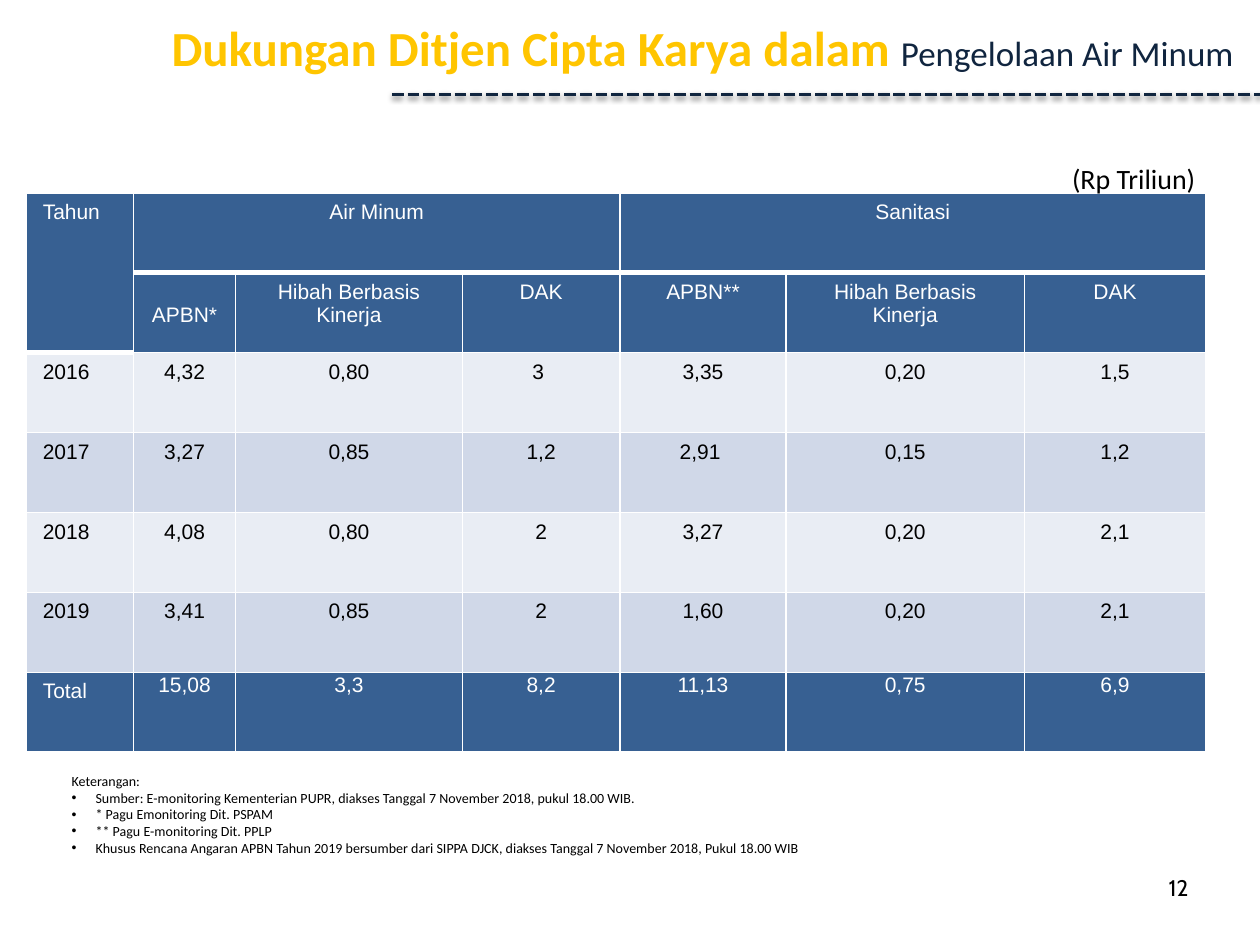
from dataclasses import dataclass
from typing import Any, Optional

from lxml.etree import SubElement
from pptx import Presentation
from pptx.dml.color import RGBColor
from pptx.enum.dml import MSO_LINE
from pptx.enum.shapes import MSO_CONNECTOR
from pptx.enum.text import MSO_ANCHOR, MSO_AUTO_SIZE, PP_ALIGN
from pptx.oxml.ns import qn
from pptx.util import Inches, Pt

NAVY, GOLD, BLACK, WHITE = "10253F", "FFC500", "000000", "FFFFFF"
HEADER_BLUE, PALE, MEDIUM = "376092", "E9EDF4", "D0D8E8"


@dataclass(frozen=True)
class Run:
    text: str
    size: float
    color: str = BLACK
    font: str = "Calibri"
    bold: bool = False


@dataclass(frozen=True)
class Line:
    runs: tuple[Run, ...]
    align: Optional[PP_ALIGN] = None
    bullet: bool = False


@dataclass(frozen=True)
class TextBlock:
    box: tuple[float, float, float, float]
    lines: tuple[Line, ...]
    frame_format: dict[str, Any]


@dataclass(frozen=True)
class BudgetRow:
    values: tuple[Optional[str], ...]
    fill: str
    color: str = BLACK
    bottom_border: float = 1
    value_insets: tuple[float, ...] = (0.13, 0.06, 0.13, 0.06)


GROW = MSO_AUTO_SIZE.SHAPE_TO_FIT_TEXT
LABEL_INSETS = (0.13, 0.06, 0.13, 0.06)
MARGINS = ("margin_left", "margin_top", "margin_right", "margin_bottom")
COLUMN_WIDTHS = (0.85, 0.81, 1.8, 1.25, 1.32, 1.89, 1.44)
MERGES = (((0, 0), (1, 0)), ((0, 1), (0, 3)), ((0, 4), (0, 6)))
GROUP_COLUMNS = ("Hibah Berbasis Kinerja", "DAK")

BUDGET = (
    BudgetRow(("Tahun", "Air Minum", None, None, "Sanitasi", None, None), HEADER_BLUE, WHITE, 3),
    BudgetRow((None, " APBN*", *GROUP_COLUMNS, "APBN**", *GROUP_COLUMNS), HEADER_BLUE, WHITE),
    BudgetRow(("2016", "4,32", "0,80", "3 ", "3,35", "0,20", "1,5"), PALE),
    BudgetRow(("2017", "3,27", "0,85", "1,2", "2,91 ", "0,15", "1,2"), MEDIUM),
    BudgetRow(("2018", "4,08", "0,80", "2", "3,27", "0,20", "2,1"), PALE),
    BudgetRow(("2019", "3,41", "0,85", "2", "1,60", "0,20", "2,1"), MEDIUM),
    BudgetRow(("Total", "15,08", "3,3", "8,2", "11,13", "0,75", "6,9"), HEADER_BLUE, WHITE,
              value_insets=(0.01, 0.01, 0.01, 0)),
)

NOTES = (
    "Sumber: E-monitoring Kementerian PUPR, diakses Tanggal 7 November 2018, pukul 18.00 WIB.",
    "* Pagu Emonitoring Dit. PSPAM",
    "** Pagu E-monitoring Dit. PPLP",
    "Khusus Rencana Angaran APBN Tahun 2019 bersumber dari SIPPA DJCK, "
    "diakses Tanggal 7 November 2018, Pukul 18.00 WIB",
)

HEADING = TextBlock(
    (-0.43, 0.09, 10.32, 0.57),
    (Line((Run("Dukungan Ditjen Cipta Karya dalam ", 28, GOLD, bold=True),
           Run("Pengelolaan Air Minum", 20, NAVY)), PP_ALIGN.RIGHT),),
    {"word_wrap": True, "auto_size": GROW},
)
PAGE_NUMBER = TextBlock(
    (6.84, 6.86, 2.69, 0.37),
    (Line((Run("12", 12.9, font="Cabin"),), PP_ALIGN.RIGHT),),
    {"word_wrap": True, "vertical_anchor": MSO_ANCHOR.MIDDLE},
)
FOOTNOTES = TextBlock(
    (0.47, 6.08, 6.04, 0.91),
    (Line((Run("Keterangan:", 8),)),
     *(Line((Run(note, 8),), bullet=True) for note in NOTES)),
    {"word_wrap": False, "auto_size": GROW},
)
UNIT = TextBlock(
    (8.41, 1.23, 1.19, 0.37),
    (Line((Run("(Rp Triliun)", 16),)),),
    {"word_wrap": False, "auto_size": GROW},
)


def rgb(color: str) -> RGBColor:
    """Turn a hex string into a colour."""
    return RGBColor.from_string(color)


def apply(target: Any, settings: dict[str, Any]) -> None:
    """Set every attribute named in the settings."""
    for attribute, value in settings.items():
        setattr(target, attribute, value)


def write_run(paragraph: Any, content: Run) -> None:
    """Append one formatted run to a paragraph."""
    run = paragraph.add_run()
    run.text = content.text
    apply(run.font, {"size": Pt(content.size), "name": content.font, "bold": content.bold})
    run.font.color.rgb = rgb(content.color)


def add_bullet(paragraph: Any) -> None:
    """Give a paragraph a hanging round bullet."""
    properties = paragraph._p.get_or_add_pPr()
    properties.set("marL", str(Inches(0.19)))
    properties.set("indent", str(-Inches(0.19)))
    SubElement(properties, qn("a:buFont"), typeface="Arial")
    SubElement(properties, qn("a:buChar"), char="•")


def add_text(slide: Any, block: TextBlock) -> None:
    """Draw a text box with its lines."""
    frame = slide.shapes.add_textbox(*map(Inches, block.box)).text_frame
    apply(frame, block.frame_format)
    for index, line in enumerate(block.lines):
        paragraph = frame.add_paragraph() if index else frame.paragraphs[0]
        paragraph.alignment = line.align
        if line.bullet:
            add_bullet(paragraph)
        for content in line.runs:
            write_run(paragraph, content)


def add_heading_rule(slide: Any) -> None:
    """Draw the dashed rule with its soft shadow."""
    rule = slide.shapes.add_connector(
        MSO_CONNECTOR.STRAIGHT, Inches(3.11), Inches(0.75), Inches(10), Inches(0.75))
    apply(rule.line, {"width": Pt(2.25), "dash_style": MSO_LINE.SQUARE_DOT})
    rule.line.color.rgb = rgb(NAVY)
    effects = SubElement(rule._element.spPr, qn("a:effectLst"))
    shadow = SubElement(effects, qn("a:outerShdw"), blurRad=str(Pt(3.1)), dist=str(Pt(1.6)),
                        dir="5400000", rotWithShape="0")
    shade = SubElement(shadow, qn("a:srgbClr"), val=BLACK)
    SubElement(shade, qn("a:alpha"), val="38000")


def add_borders(cell: Any, bottom: float) -> None:
    """Outline a cell in white."""
    properties = cell._tc.get_or_add_tcPr()
    for side, width in {"L": 1, "R": 1, "T": 1, "B": bottom}.items():
        border = SubElement(properties, qn(f"a:ln{side}"), w=str(Pt(width)))
        fill = SubElement(border, qn("a:solidFill"))
        SubElement(fill, qn("a:srgbClr"), val=WHITE)


def fill_cell(cell: Any, row: BudgetRow, column: int) -> None:
    """Format one budget cell and write its value."""
    add_borders(cell, row.bottom_border)
    cell.fill.solid()
    cell.fill.fore_color.rgb = rgb(row.fill)
    insets = row.value_insets if column else LABEL_INSETS
    apply(cell, dict(zip(MARGINS, map(Inches, insets))))
    value = row.values[column]
    if value is not None:
        paragraph = cell.text_frame.paragraphs[0]
        paragraph.alignment = PP_ALIGN.CENTER if column else PP_ALIGN.LEFT
        write_run(paragraph, Run(value, 12, row.color, "Arial"))


def add_budget_table(slide: Any) -> None:
    """Draw the budget table with merged group headings."""
    table = slide.shapes.add_table(
        len(BUDGET), len(COLUMN_WIDTHS),
        Inches(0.21), Inches(1.53), Inches(9.35), Inches(4.44)).table
    for column, width in zip(table.columns, COLUMN_WIDTHS):
        column.width = Inches(width)
    for first, last in MERGES:
        table.cell(*first).merge(table.cell(*last))
    for row_index, row in enumerate(BUDGET):
        for column in range(len(COLUMN_WIDTHS)):
            fill_cell(table.cell(row_index, column), row, column)


def main() -> None:
    """Build and save the slide."""
    presentation = Presentation()
    apply(presentation, {"slide_width": Inches(10), "slide_height": Inches(7.5)})
    slide = presentation.slides.add_slide(presentation.slide_layouts[6])
    add_heading_rule(slide)
    add_text(slide, HEADING)
    add_text(slide, PAGE_NUMBER)
    add_budget_table(slide)
    add_text(slide, FOOTNOTES)
    add_text(slide, UNIT)
    presentation.save("out.pptx")


if __name__ == "__main__":
    main()
